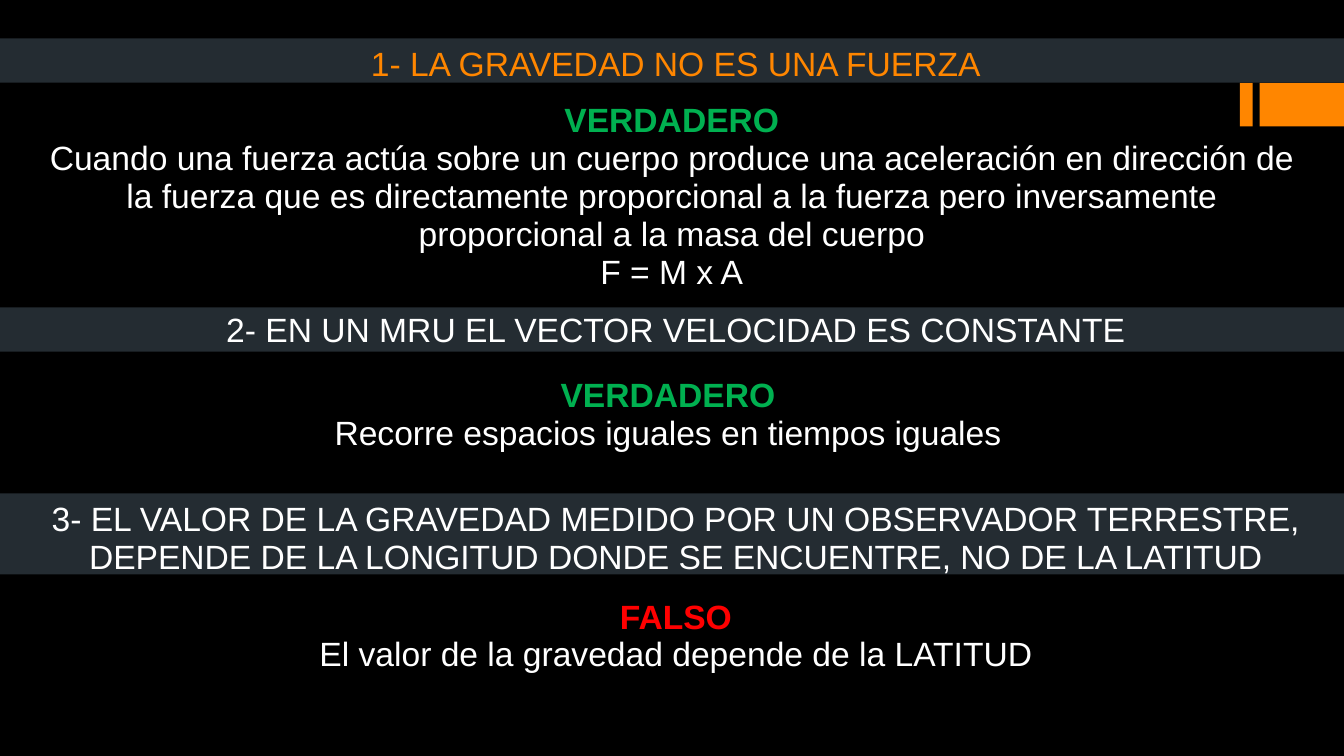
from pptx import Presentation
from pptx.dml.color import RGBColor
from pptx.enum.shapes import MSO_SHAPE
from pptx.enum.text import MSO_ANCHOR, PP_ALIGN
from pptx.util import Pt

RECTANGLE = MSO_SHAPE.RECTANGLE
TOP = MSO_ANCHOR.TOP
CENTER = PP_ALIGN.CENTER

COLORS = {
    "background": "000000",
    "band": "242C32",
    "accent": "FF8600",
    "text": "FFFFFF",
    "true": "00B050",
    "false": "FF0000",
}
SLIDE_WIDTH, SLIDE_HEIGHT = 960, 540
TEXT_WIDTH = 913.7
FRAME_FORMAT = {"word_wrap": True, "vertical_anchor": TOP}
PARAGRAPH_FORMAT = {"alignment": CENTER, "line_spacing": 0.94}
FONT_FORMAT = {"name": "Arial", "size": Pt(24)}

# left, width
ACCENT_MARKS = [(885.6, 9.2), (899.7, 60.3)]
# top, height
BANDS = [(27.4, 31.7), (219.6, 31.7), (352.4, 58)]
# left, top, height, paragraphs as (text, color, bold)
STATEMENTS = [
    (25.9, 29.5, 31.7, [("1- LA GRAVEDAD NO ES UNA FUERZA", "accent", False)]),
    (25.9, 219.6, 31.7,
     [("2- EN UN MRU EL VECTOR VELOCIDAD ES CONSTANTE", "text", False)]),
    (25.9, 354.2, 58.3,
     [("3- EL VALOR DE LA GRAVEDAD MEDIDO POR UN OBSERVADOR TERRESTRE, "
       "DEPENDE DE LA LONGITUD DONDE SE ENCUENTRE, NO DE LA LATITUD",
       "text", False)]),
]
ANSWERS = [
    (23, 69.8, 160.6, [
        ("VERDADERO", "true", True),
        ("Cuando una fuerza actúa sobre un cuerpo produce una aceleración en "
         "dirección de la fuerza que es directamente proporcional a la fuerza "
         "pero inversamente proporcional a la masa del cuerpo", "text", False),
        ("F = M x A", "text", False),
    ]),
    (20.2, 265.7, 69.8, [
        ("VERDADERO", "true", True),
        ("Recorre espacios iguales en tiempos iguales", "text", False),
    ]),
    (25.9, 424.1, 58.3, [
        ("FALSO", "false", True),
        ("El valor de la gravedad depende de la LATITUD", "text", False),
    ]),
]


def color(name):
    return RGBColor.from_string(COLORS[name])


def apply_format(target, values):
    for name, value in values.items():
        setattr(target, name, value)


def add_block(page, left, top, width, height, fill):
    block = page.shapes.add_shape(
        RECTANGLE, Pt(left), Pt(top), Pt(width), Pt(height))
    block.shadow.inherit = False
    block.fill.solid()
    block.fill.fore_color.rgb = color(fill)
    block.line.fill.background()


def add_text(page, left, top, height, paragraphs):
    box = page.shapes.add_textbox(
        Pt(left), Pt(top), Pt(TEXT_WIDTH), Pt(height))
    frame = box.text_frame
    apply_format(frame, FRAME_FORMAT)
    for index, (text, color_name, bold) in enumerate(paragraphs):
        para = frame.add_paragraph() if index else frame.paragraphs[0]
        apply_format(para, PARAGRAPH_FORMAT)
        span = para.add_run()
        span.text = text
        apply_format(span.font, {**FONT_FORMAT, "bold": bold})
        span.font.color.rgb = color(color_name)


def main():
    deck = Presentation()
    deck.slide_width, deck.slide_height = Pt(SLIDE_WIDTH), Pt(SLIDE_HEIGHT)
    page = deck.slides.add_slide(deck.slide_layouts[6])
    page.background.fill.solid()
    page.background.fill.fore_color.rgb = color("background")
    for left, width in ACCENT_MARKS:
        add_block(page, left, 59.3, width, 31, "accent")
    for top, height in BANDS:
        add_block(page, 0, top, SLIDE_WIDTH, height, "band")
    for entry in STATEMENTS + ANSWERS:
        add_text(page, *entry)
    deck.save("out.pptx")


if __name__ == "__main__":
    main()
